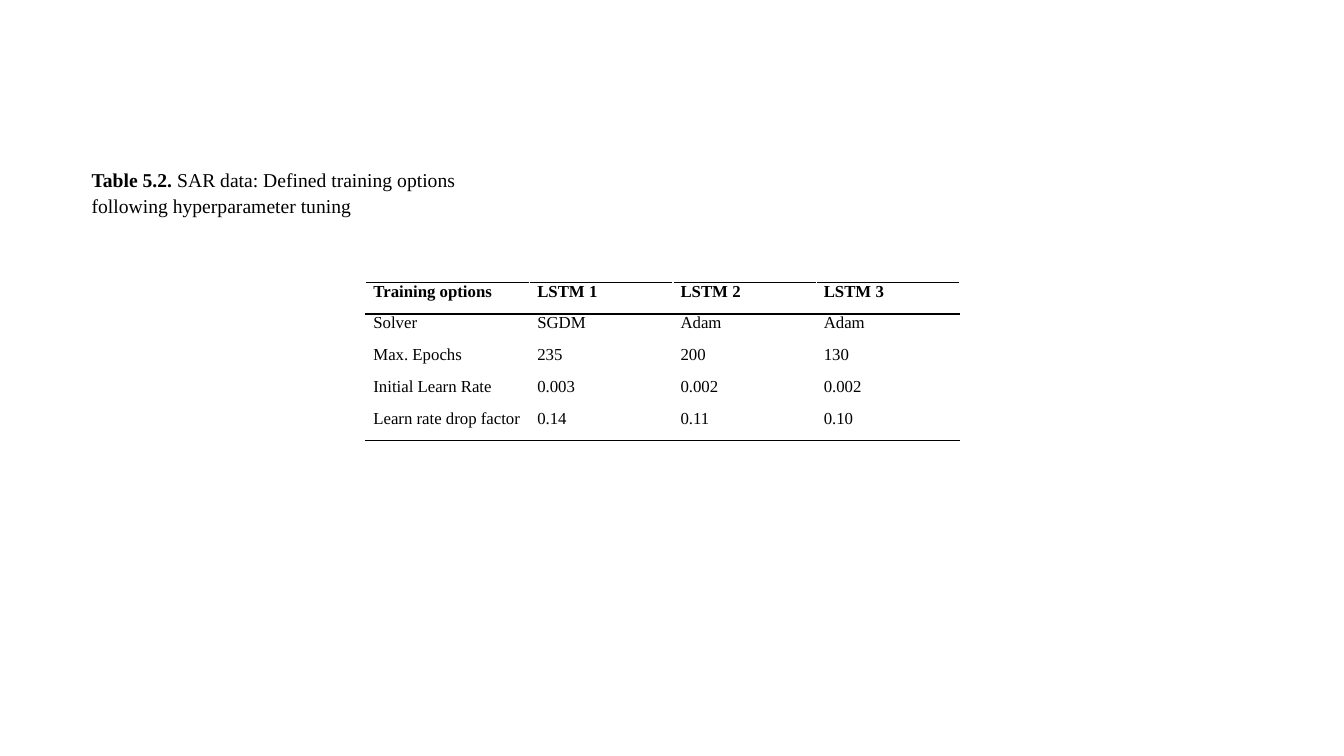
from pptx import Presentation
from pptx.dml.color import RGBColor as RGB
from pptx.enum.text import MSO_ANCHOR as ANCHOR, MSO_AUTO_SIZE as AUTO
from pptx.oxml.ns import qn
from pptx.util import Cm, Pt
from lxml.etree import SubElement

COLORS = {"text": "000000", "rule": "000000", "blank": "FFFFFF"}
FONT = "Times New Roman"
ROWS = [
    ("Training options", "LSTM 1", "LSTM 2", "LSTM 3"),
    ("Solver", "SGDM", "Adam", "Adam"),
    ("Max. Epochs", "235", "200", "130"),
    ("Initial Learn Rate", "0.003", "0.002", "0.002"),
    ("Learn rate drop factor", "0.14", "0.11", "0.10"),
]
COL_WIDTHS = [4.13, 3.61, 3.61, 3.61]
ROW_HEIGHT = 0.8


def set_font(p, size, bold=None):
    p.font.name, p.font.size, p.font.bold = FONT, Pt(size), bold
    p.font.color.rgb = RGB.from_string(COLORS["text"])


def set_border(cell, side, color):
    ln = SubElement(cell._tc.get_or_add_tcPr(), qn(f"a:{side}"), w=str(Pt(1)))
    fill = SubElement(ln, qn("a:solidFill"))
    SubElement(fill, qn("a:srgbClr"), val=COLORS[color])


prs = Presentation()
prs.slide_width, prs.slide_height = Cm(33.87), Cm(19.05)
slide = prs.slides.add_slide(prs.slide_layouts[6])

# Training options table
table = slide.shapes.add_table(
    len(ROWS), len(COL_WIDTHS), Cm(9.22), Cm(7.11),
    Cm(sum(COL_WIDTHS)), Cm(ROW_HEIGHT * len(ROWS))).table
table.horz_banding = False
for col, width in zip(table.columns, COL_WIDTHS):
    col.width = Cm(width)

last = len(ROWS) - 1
for i, values in enumerate(ROWS):
    table.rows[i].height = Cm(ROW_HEIGHT)
    for j, value in enumerate(values):
        cell = table.cell(i, j)
        cell.margin_left = cell.margin_right = Cm(0.19)
        cell.margin_top = cell.margin_bottom = 0
        cell.text = value
        p = cell.text_frame.paragraphs[0]
        p.space_before = p.space_after = Pt(3)
        set_font(p, 12, i == 0)
        # Rules above and below the header and below the last row
        set_border(cell, "lnL", "blank")
        set_border(cell, "lnR", "blank")
        set_border(cell, "lnT", "rule" if i <= 1 else "blank")
        set_border(cell, "lnB", "rule" if i in (0, last) else "blank")
        cell.fill.background()

# Caption
caption = slide.shapes.add_textbox(Cm(2.06), Cm(4.11), Cm(10.52), Cm(1.45))
tf = caption.text_frame
tf.word_wrap = True
tf.auto_size = AUTO.SHAPE_TO_FIT_TEXT
tf.vertical_anchor = ANCHOR.MIDDLE
p = tf.paragraphs[0]
p.line_spacing = 1.07
set_font(p, 14)
r = p.add_run()
r.text = "Table 5.2. "
r.font.bold = True
p.add_run().text = "SAR data: Defined training options following hyperparameter tuning"

prs.save("out.pptx")
